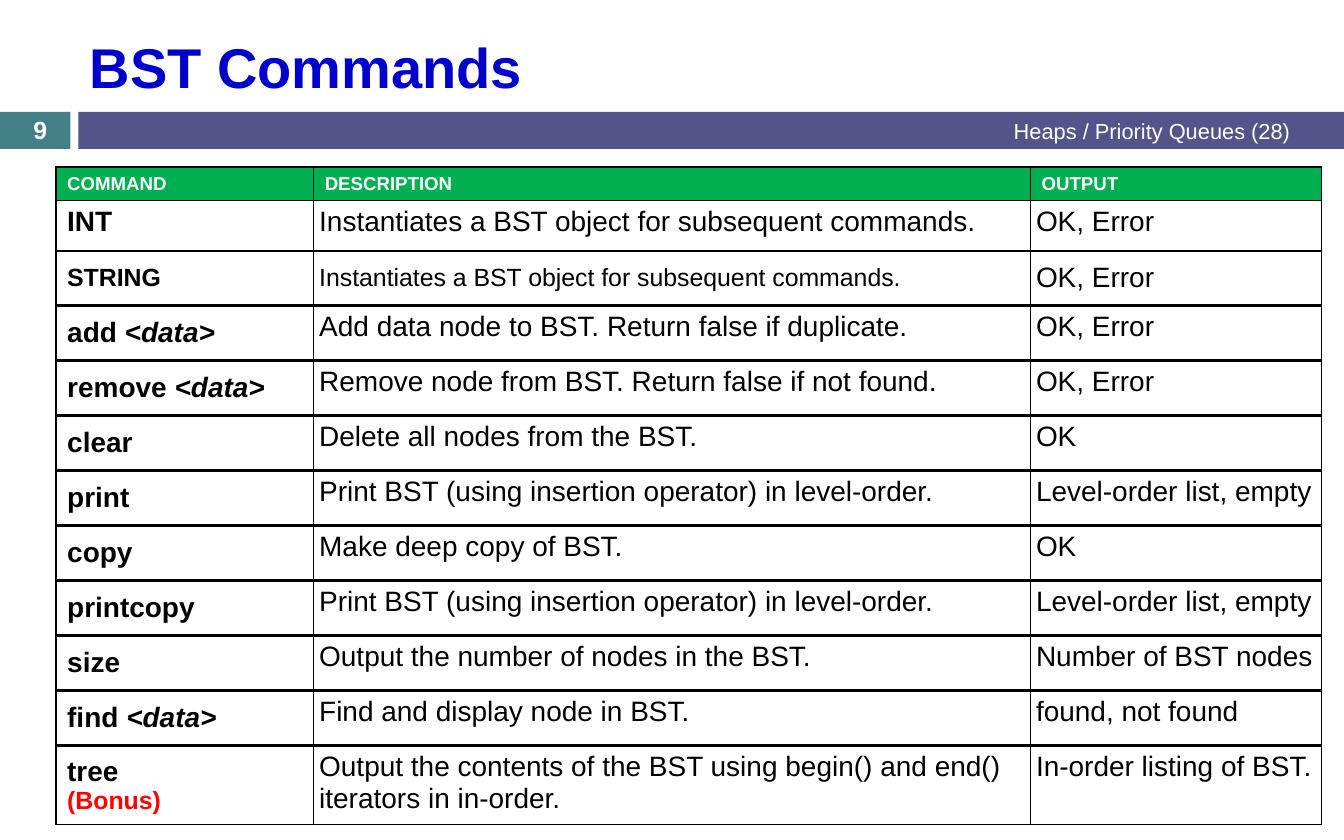
from lxml import etree
from pptx import Presentation
from pptx.dml.color import RGBColor
from pptx.enum import shapes, text
from pptx.oxml.ns import qn
from pptx.util import Inches, Pt

FONT = "Arial"
COLORS = {
    "title": "0000CC", "teal": "438086", "indigo": "53548A", "header": "00B050",
    "white": "FFFFFF", "black": "000000", "bonus": "FF0000",
}
TITLE = "BST Commands"
TOPIC = "Heaps / Priority Queues (28)"
PAGE = "9"
HEADINGS = ("COMMAND", "DESCRIPTION", "OUTPUT")
INSTANTIATE = "Instantiates a BST object for subsequent commands."
PRINT = "Print BST (using insertion operator) in level-order."
COMMANDS = [
    ("INT", "", INSTANTIATE, "OK, Error"),
    ("STRING", "", INSTANTIATE, "OK, Error"),
    ("add ", "<data>", "Add data node to BST. Return false if duplicate.", "OK, Error"),
    ("remove ", "<data>", "Remove node from BST. Return false if not found.", "OK, Error"),
    ("clear", "", "Delete all nodes from the BST.", "OK"),
    ("print", "", PRINT, "Level-order list, empty"),
    ("copy", "", "Make deep copy of BST.", "OK"),
    ("printcopy", "", PRINT, "Level-order list, empty"),
    ("size", "", "Output the number of nodes in the BST.", "Number of BST nodes"),
    ("find ", "<data>", "Find and display node in BST.", "found, not found"),
    ("tree", "", "Output the contents of the BST using begin() and end() iterators in in-order.",
     "In-order listing of BST."),
]
BONUS = "(Bonus)"

LEFT, HEADER_TOP, FIRST_TOP, LAST_TOP = 0.5, 1.49, 2.24, 6.66
COLUMNS = (2.3, 6.4, 2.6)
HEADER_H, INT_H, ROW_H, TREE_H = 0.28, 0.46, 0.48, 0.6
PITCH = (LAST_TOP - FIRST_TOP) / (len(COMMANDS) - 2)
MIDDLE, TOP = text.MSO_ANCHOR.MIDDLE, text.MSO_ANCHOR.TOP


def rgb(name):
    return RGBColor.from_string(COLORS[name])


def style(p, size, color, bold=False, align=text.PP_ALIGN.LEFT):
    p.font.name, p.font.size, p.font.bold = FONT, Pt(size), bold
    p.font.color.rgb = rgb(color)
    p.alignment = align


def add_bar(s, box, color):
    sp = s.shapes.add_shape(shapes.MSO_SHAPE.RECTANGLE, *map(Inches, box))
    sp.shadow.inherit = False
    sp.fill.solid()
    sp.fill.fore_color.rgb = rgb(color)
    sp.line.fill.background()


def add_label(s, box, words, size, bold, align):
    tf = s.shapes.add_textbox(*map(Inches, box)).text_frame
    tf.word_wrap = True
    tf.vertical_anchor = MIDDLE
    tf.text = words
    style(tf.paragraphs[0], size, "white", bold, align)


def add_table(s, top, heights):
    table = s.shapes.add_table(
        len(heights), len(COLUMNS), Inches(LEFT), Inches(top),
        Inches(sum(COLUMNS)), Inches(sum(heights))).table
    table.first_row = table.horz_banding = False
    for column, width in zip(table.columns, COLUMNS):
        column.width = Inches(width)
    for row, height in zip(table.rows, heights):
        row.height = Inches(height)
    return table


def format_cell(cell, fill, anchor):
    cell.vertical_anchor = anchor
    tcPr = cell._tc.get_or_add_tcPr()
    for side in ("a:lnL", "a:lnR", "a:lnT", "a:lnB"):
        ln = etree.SubElement(tcPr, qn(side), w=str(Pt(1)))
        solid = etree.SubElement(ln, qn("a:solidFill"))
        etree.SubElement(solid, qn("a:srgbClr"), val=COLORS["black"])
    cell.fill.solid()
    cell.fill.fore_color.rgb = rgb(fill)


def fill_header(cells):
    for cell, heading in zip(cells, HEADINGS):
        format_cell(cell, "header", MIDDLE)
        cell.text = heading
        style(cell.text_frame.paragraphs[0], 12, "white", True)


def fill_command(cells, command):
    name, argument, *details = command
    small = name == "STRING"
    format_cell(cells[0], "white", TOP if name == "INT" else MIDDLE)
    tf = cells[0].text_frame
    p = tf.paragraphs[0]
    p.add_run().text = name
    if argument:
        r = p.add_run()
        r.text = argument
        r.font.italic = True
    style(p, 16 if small else 18, "black", True)
    if name == "tree":
        p = tf.add_paragraph()
        p.text = BONUS
        style(p, 16, "bonus", True)

    for cell, words, size in zip(cells[1:], details, (16 if small else 18, 18)):
        format_cell(cell, "white", MIDDLE if small else TOP)
        cell.margin_left = cell.margin_right = Inches(0.05)
        cell.text = words
        style(cell.text_frame.paragraphs[0], size, "black")


def main():
    prs = Presentation()
    prs.slide_width, prs.slide_height = Inches(12), Inches(7.5)
    s = prs.slides.add_slide(prs.slide_layouts[5])

    add_bar(s, (0, 1, 0.63, 0.33), "teal")
    add_bar(s, (0.7, 1, 11.3, 0.33), "indigo")

    title = s.shapes.title
    title.left, title.top, title.width, title.height = map(Inches, (0.7, 0.19, 10.91, 0.8))
    title.text_frame.text = TITLE
    title.text_frame.vertical_anchor = MIDDLE
    style(title.text_frame.paragraphs[0], 36, "title", True)

    add_label(s, (6.17, 1, 5.45, 0.33), TOPIC, 14, False, text.PP_ALIGN.RIGHT)
    add_label(s, (0, 1.01, 0.72, 0.3), PAGE, 16, True, text.PP_ALIGN.CENTER)

    table = add_table(s, HEADER_TOP, (HEADER_H, INT_H))
    fill_header(table.rows[0].cells)
    fill_command(list(table.rows[1].cells), COMMANDS[0])
    for i, command in enumerate(COMMANDS[1:]):
        height = TREE_H if command[0] == "tree" else ROW_H
        table = add_table(s, FIRST_TOP + i * PITCH, (height,))
        fill_command(list(table.rows[0].cells), command)

    prs.save("out.pptx")


if __name__ == "__main__":
    main()
